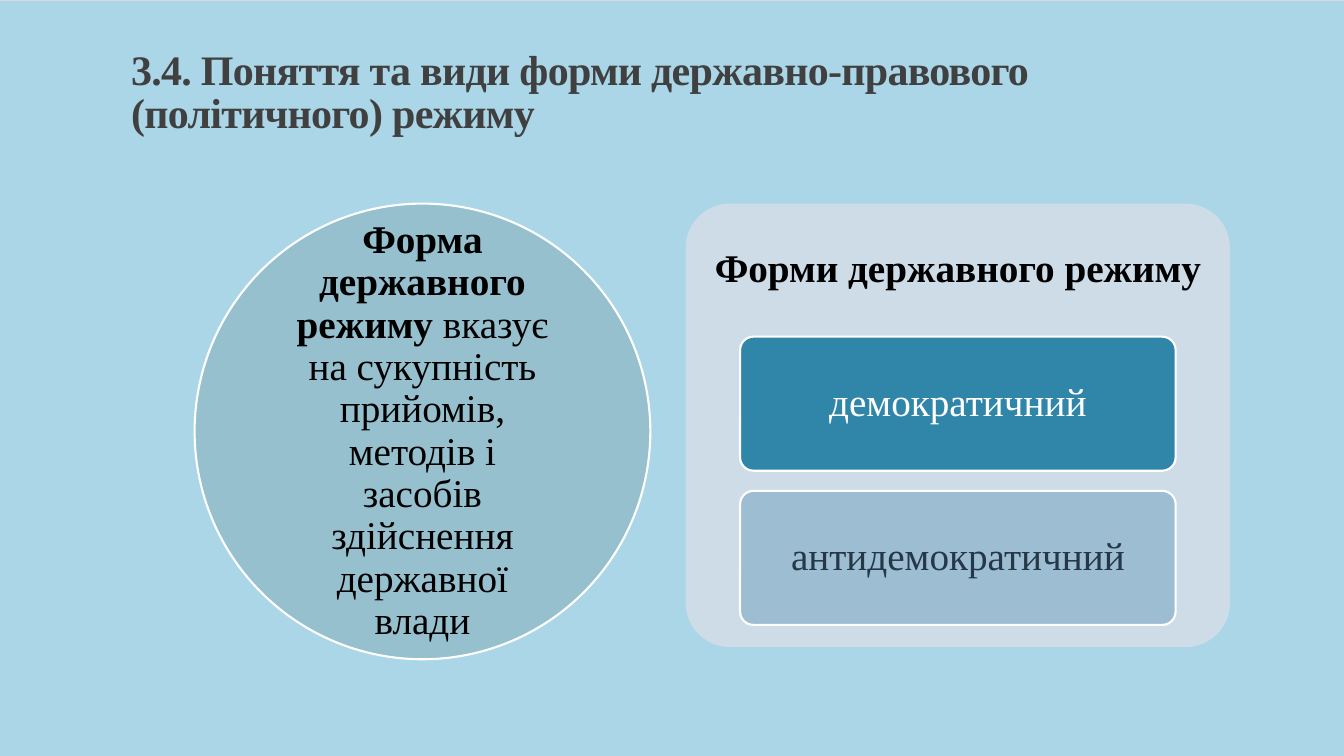
from lxml import etree
from pptx import Presentation
from pptx.dml.color import RGBColor
from pptx.enum import dml, shapes, text
from pptx.oxml import ns
from pptx.util import Inches, Pt

COLORS = {
    "sky": "AAD6E7", "stripe": "D9D9D9", "title": "404040",
    "circle": "84ACB6", "panel": "CEDCE7", "white": "FFFFFF", "black": "000000",
    "democratic": "2F86A9", "undemocratic": "9CBDD2", "navy": "253848",
}
FONT = "Times New Roman"

# Square grid: 133.3 columns by 75 rows
CELL = Inches(0.1)
COLUMNS, ROWS = 133.3, 75


def add_block(kind, left, top, width, height, fill, outlined=True):
    block = page.shapes.add_shape(kind, *(round(n * CELL) for n in (left, top, width, height)))
    block.shadow.inherit = False
    block.fill.solid()
    block.fill.fore_color.rgb = RGBColor.from_string(COLORS[fill])
    if outlined:
        block.line.color.rgb = RGBColor.from_string(COLORS["white"])
        block.line.width = Pt(1.5)
    else:
        block.line.fill.background()
    return block


def write(box, spans, color, insets, size=28, align=text.PP_ALIGN.CENTER,
          anchor=text.MSO_ANCHOR.MIDDLE, spacing=0.9):
    frame = box.text_frame
    frame.word_wrap = True
    frame.auto_size = text.MSO_AUTO_SIZE.NONE
    frame.vertical_anchor = anchor
    frame.margin_left = frame.margin_right = Inches(insets[0])
    frame.margin_top = frame.margin_bottom = Inches(insets[1])
    para = frame.paragraphs[0]
    para.alignment = align
    para.line_spacing = spacing
    for words, bold in spans:
        span = para.add_run()
        span.text = words
        span.font.name = FONT
        span.font.size = Pt(size)
        span.font.bold = bold
        span.font.color.rgb = RGBColor.from_string(COLORS[color])
    return para


deck = Presentation()
deck.slide_width = round(COLUMNS * CELL)
deck.slide_height = ROWS * CELL
page = deck.slides.add_slide(deck.slide_layouts[5])

# Background
backdrop = page.background.fill
backdrop.patterned()
backdrop.pattern = dml.MSO_PATTERN.DARK_HORIZONTAL
backdrop.fore_color.rgb = RGBColor.from_string(COLORS["sky"])
backdrop.back_color.rgb = RGBColor.from_string(COLORS["stripe"])

# Title, with slightly tightened letters
title = page.shapes.title
title.left, title.top = 12 * CELL, round(3.1 * CELL)
title.width, title.height = 110 * CELL, 11 * CELL
heading = write(title, [("3.4. Поняття та види форми державно-правового (політичного) режиму", True)],
                "title", (0.1, 0.05), size=30, align=text.PP_ALIGN.LEFT,
                anchor=text.MSO_ANCHOR.BOTTOM, spacing=0.85)
heading.runs[0].font._element.set("spc", "-50")

# Definition in a half-transparent circle
TOP = 20.2
circle = add_block(shapes.MSO_SHAPE.OVAL, 19.3, TOP, 45.2, 45.2, "circle")
tint = circle.fill._xPr.find(ns.qn("a:solidFill"))[0]
etree.SubElement(tint, ns.qn("a:alpha"), val="50000")
write(circle, [("Форма державного режиму ", True),
               ("вказує на сукупність прийомів, методів і засобів здійснення державної влади", False)],
      "black", (0.25, 0.04))

# Panel with its heading in the upper 30 percent
PANEL_LEFT, PANEL_WIDTH, PANEL_HEIGHT = 68, 54, 44
HEAD_HEIGHT = 0.3 * PANEL_HEIGHT
panel = add_block(shapes.MSO_SHAPE.ROUNDED_RECTANGLE, PANEL_LEFT, TOP,
                  PANEL_WIDTH, PANEL_HEIGHT, "panel", outlined=False)
panel.adjustments[0] = 0.1
caption = page.shapes.add_textbox(PANEL_LEFT * CELL, round(TOP * CELL),
                                  PANEL_WIDTH * CELL, round(HEAD_HEIGHT * CELL))
write(caption, [("Форми державного режиму", True)], "black", (0.12, 0.12))

# Kinds of regime, stacked and inset by a tenth of the panel
KIND_HEIGHT, KIND_STEP = 13.3, 15.3
kinds = [("демократичний", "democratic", "white"),
         ("антидемократичний", "undemocratic", "navy")]
for row, (name, fill, color) in enumerate(kinds):
    kind = add_block(shapes.MSO_SHAPE.ROUNDED_RECTANGLE, PANEL_LEFT + 0.1 * PANEL_WIDTH,
                     TOP + HEAD_HEIGHT + row * KIND_STEP, 0.8 * PANEL_WIDTH, KIND_HEIGHT, fill)
    kind.adjustments[0] = 0.1
    write(kind, [(name, False)], color, (0.08, 0.06))

deck.save("out.pptx")
